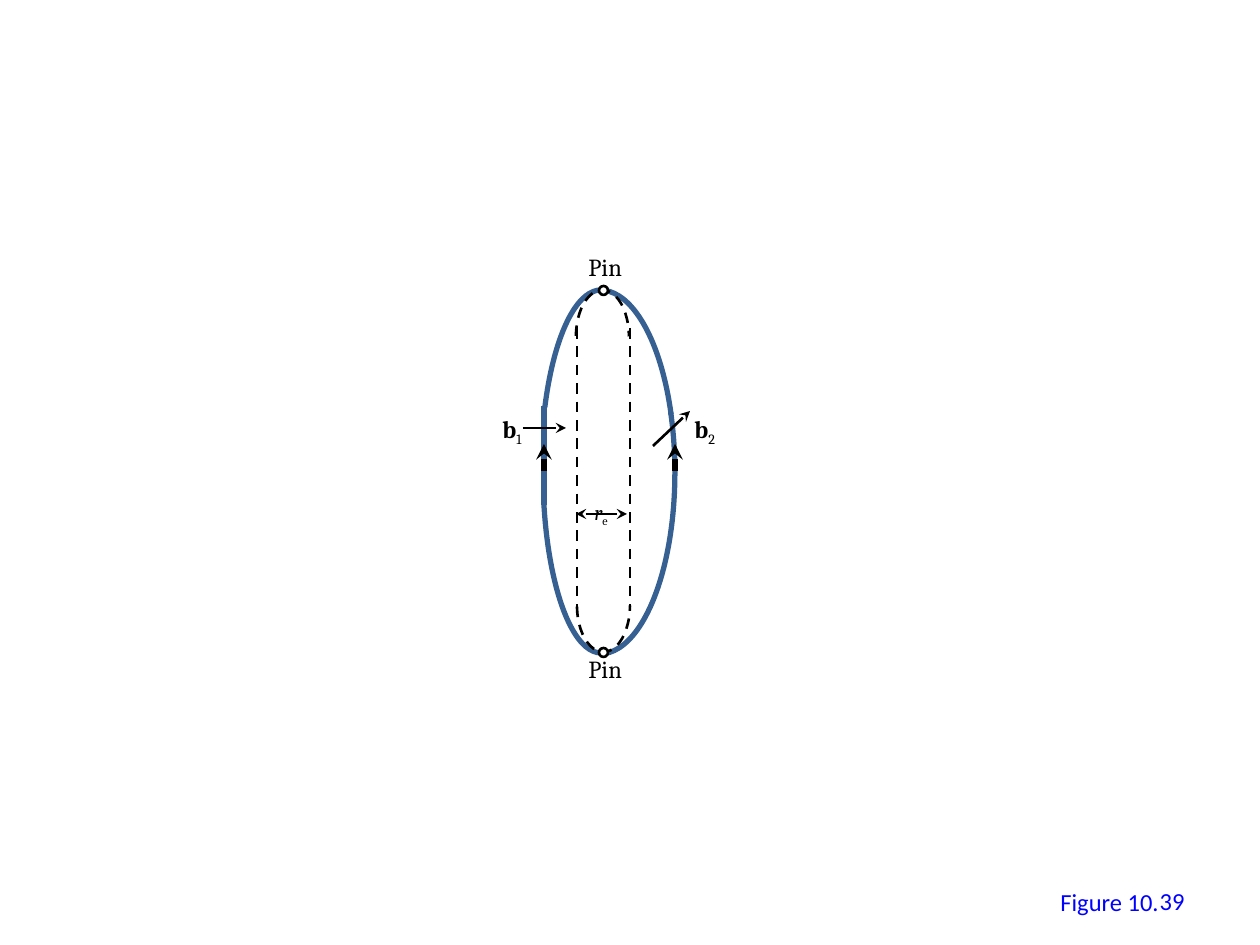
from dataclasses import dataclass

from lxml.etree import SubElement
from pptx import Presentation
from pptx.dml.color import RGBColor
from pptx.enum.dml import MSO_LINE
from pptx.enum.shapes import MSO_CONNECTOR, MSO_SHAPE
from pptx.enum.text import MSO_ANCHOR, MSO_AUTO_SIZE, PP_ALIGN
from pptx.oxml.ns import qn
from pptx.util import Emu, Inches, Pt

PX = 914400 / 126
BLACK = RGBColor(0, 0, 0)
WHITE = RGBColor(255, 255, 255)
STEEL = RGBColor(0x37, 0x60, 0x92)
BLUE = RGBColor(0, 0, 255)
TOP = 269.9


@dataclass
class Label:
    x: int
    y: int
    w: int
    h: int
    text: str
    sub: str = ""
    size: int = 14
    font: str = "Cambria"
    color: RGBColor = BLACK
    bold: bool = False
    italic: bool = False


@dataclass
class Arc:
    x: int
    y: int
    w: int
    h: int
    start: float
    end: float
    flip: str = ""
    color: RGBColor = STEEL
    width: float = 3
    dash: bool = False


@dataclass
class Line:
    x1: int
    y1: int
    x2: int
    y2: int
    width: float = 1.5
    color: RGBColor = BLACK
    ends: tuple = ()
    dash: bool = False


def px(*vals: int) -> list[Emu]:
    return [Emu(round(v * PX)) for v in vals]


def stroke(line, color: RGBColor, width: float, dash: bool = False) -> None:
    line.color.rgb = color
    line.width = Pt(width)
    if dash:
        line.dash_style = MSO_LINE.DASH


def draw_label(shapes, item: Label):
    box = shapes.add_textbox(*px(item.x, item.y, item.w, item.h))
    frame = box.text_frame
    frame.word_wrap = False
    frame.auto_size = MSO_AUTO_SIZE.SHAPE_TO_FIT_TEXT
    para = frame.paragraphs[0]
    para.font.name = item.font
    para.font.size = Pt(item.size)
    para.font.color.rgb = item.color
    run = para.add_run()
    run.text = item.text
    run.font.bold = item.bold
    run.font.italic = item.italic
    if item.sub:
        low = para.add_run()
        low.text = item.sub
        low.font._element.set("baseline", "-25000")
    return frame


def draw_arc(shapes, item: Arc) -> None:
    """Draw an arc clockwise between two angles in degrees, then flip it."""
    arc = shapes.add_shape(MSO_SHAPE.ARC, *px(item.x, item.y, item.w, item.h))
    arc.shadow.inherit = False
    arc.fill.background()
    stroke(arc.line, item.color, item.width, item.dash)
    # One adjustment unit is 100000 steps; one degree is 60000.
    arc.adjustments[0] = item.start * 0.6
    arc.adjustments[1] = item.end * 0.6
    for axis in item.flip:
        arc._element.spPr.xfrm.set("flip" + axis, "1")


def draw_line(shapes, item: Line) -> None:
    line = shapes.add_connector(
        MSO_CONNECTOR.STRAIGHT, *px(item.x1, item.y1, item.x2, item.y2))
    stroke(line.line, item.color, item.width, item.dash)
    for end in item.ends:
        SubElement(line.line._get_or_add_ln(), qn(f"a:{end}"), type="stealth")
    SubElement(line._element.spPr, qn("a:effectLst"))


def draw_pin(shapes, x: int, y: int) -> None:
    pin = shapes.add_shape(MSO_SHAPE.OVAL, *px(x, y, 9, 9))
    pin.shadow.inherit = False
    pin.fill.solid()
    pin.fill.fore_color.rgb = WHITE
    stroke(pin.line, BLACK, 1.5)


CURVES = [
    Arc(541, 290, 120, 363, TOP, 311.2, "H"),
    Arc(525, 290, 150, 363, TOP, 321.4),
    Arc(525, 291, 150, 363, TOP, 40.4, "V"),
    Arc(543, 290, 116, 363, TOP, 329.6, "HV"),
]
CAPS = [
    Arc(576, 290, 53, 93, 181.2, 0, "", BLACK, 1.5, True),
    Arc(577, 559, 53, 93, 182.5, 0, "V", BLACK, 1.5, True),
]
LINES = [
    Line(576, 514, 627, 514, 1, ends=("headEnd", "tailEnd")),
    Line(544, 406, 544, 505, 3, STEEL),
    Line(675, 444, 675, 471, 3, ends=("headEnd",)),
    Line(653, 446, 690, 411, ends=("tailEnd",)),
    Line(523, 428, 566, 428, ends=("tailEnd",)),
    Line(544, 444, 544, 471, 3, ends=("headEnd",)),
]
LABELS = [
    Label(576, 246, 59, 43, "Pin"),
    Label(576, 648, 59, 43, "Pin"),
    Label(490, 408, 48, 43, "b", "1", bold=True),
    Label(682, 408, 48, 43, "b", "2", bold=True),
    Label(582, 493, 45, 38, "r", "e", 12, italic=True),
    Label(1048, 881, 125, 43, "Figure 10.", font="Calibri", color=BLUE),
]
NUMBER = Label(903, 876, 294, 50, "39", font="Calibri", color=BLUE)


def main() -> None:
    deck = Presentation()
    deck.slide_width, deck.slide_height = Inches(10), Inches(7.5)
    shapes = deck.slides.add_slide(deck.slide_layouts[6]).shapes

    for curve in CURVES:
        draw_arc(shapes, curve)
    for line in LINES:
        draw_line(shapes, line)
    for item in LABELS:
        draw_label(shapes, item)

    loop = shapes.add_group_shape().shapes
    for x in (577, 630):
        draw_line(loop, Line(x, 328, x, 611, dash=True))
    for cap in CAPS:
        draw_arc(loop, cap)
    for y in (286, 648):
        draw_pin(shapes, 599, y)

    frame = draw_label(shapes, NUMBER)
    frame.auto_size = MSO_AUTO_SIZE.NONE
    frame.word_wrap = True
    frame.vertical_anchor = MSO_ANCHOR.MIDDLE
    frame.paragraphs[0].alignment = PP_ALIGN.RIGHT

    deck.save("out.pptx")


if __name__ == "__main__":
    main()
